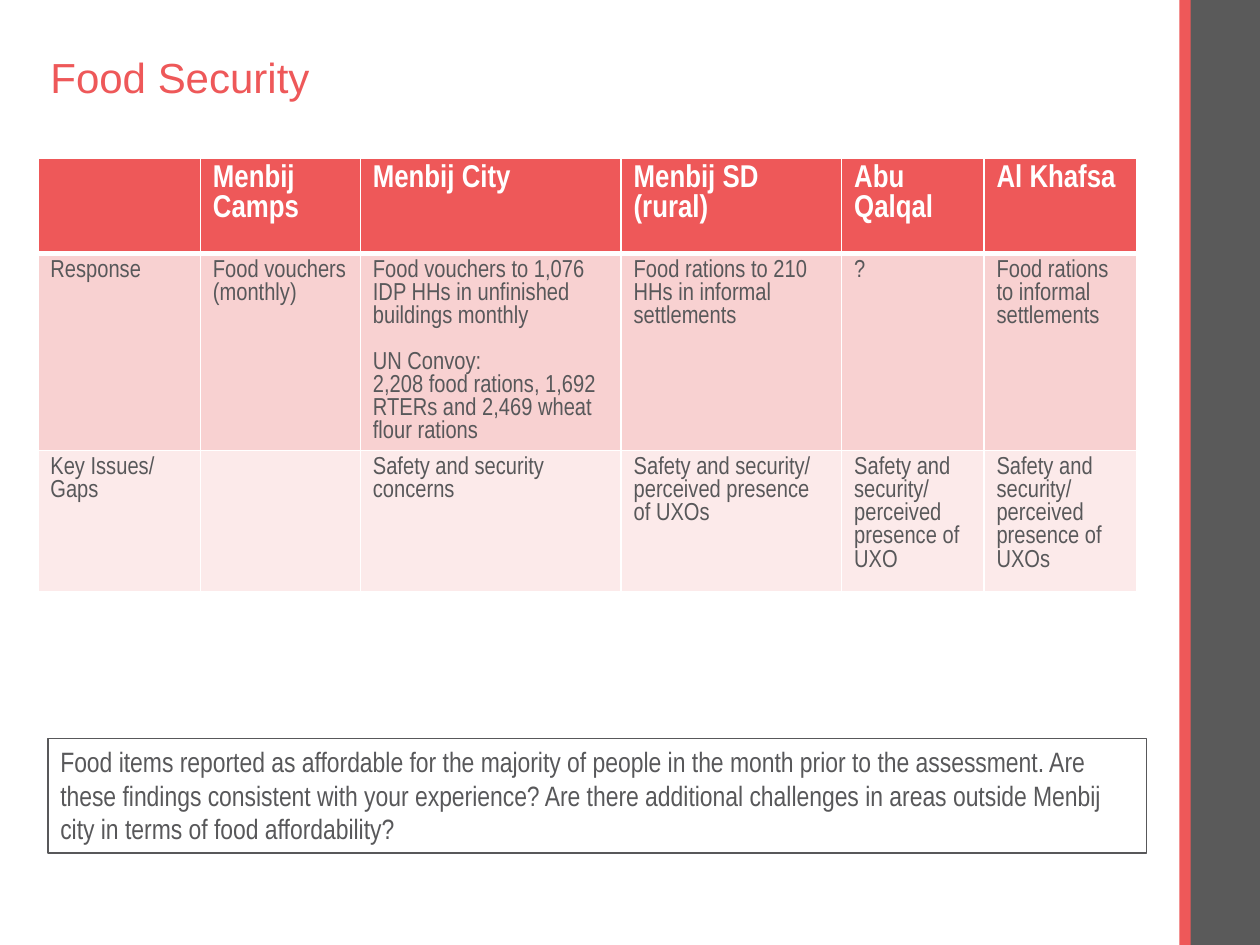
from dataclasses import dataclass

from lxml.etree import SubElement
from pptx import Presentation
from pptx.dml.color import RGBColor
from pptx.enum.shapes import MSO_SHAPE
from pptx.enum.text import MSO_ANCHOR, PP_ALIGN
from pptx.oxml.ns import qn
from pptx.util import Inches, Pt


@dataclass(frozen=True)
class Theme:
    accent: str = "EE5859"
    bar: str = "5A5A5A"
    text: str = "58585A"
    white: str = "FFFFFF"
    bands: tuple = ("F8D1D1", "FCEAEA")
    heading_font: str = "Arial"
    body_font: str = "Arial Narrow"
    title_size: int = 24
    header_size: int = 18
    cell_size: int = 14
    note_size: int = 16


class SlideBuilder:
    def __init__(self, slide, theme):
        self.slide = slide
        self.theme = theme

    def style(self, paragraph, font, size, color, bold=False):
        paragraph.alignment = PP_ALIGN.LEFT
        paragraph.font.name = font
        paragraph.font.size = Pt(size)
        paragraph.font.bold = bold
        paragraph.font.color.rgb = RGBColor.from_string(color)

    def rectangle(self, left, top, width, height, fill=None, line=None):
        box = self.slide.shapes.add_shape(
            MSO_SHAPE.RECTANGLE, Inches(left), Inches(top), Inches(width), Inches(height))
        box.shadow.inherit = False
        if fill:
            box.fill.solid()
            box.fill.fore_color.rgb = RGBColor.from_string(fill)
        else:
            box.fill.background()
        if line:
            box.line.color.rgb = RGBColor.from_string(line)
            box.line.width = Pt(0.75)
        else:
            box.line.fill.background()
        return box

    def title(self, text, left, top, width, height):
        title = self.slide.shapes.title
        title.left, title.top = Inches(left), Inches(top)
        title.width, title.height = Inches(width), Inches(height)
        frame = title.text_frame
        frame.text = text
        frame.vertical_anchor = MSO_ANCHOR.MIDDLE
        paragraph = frame.paragraphs[0]
        paragraph.line_spacing = 0.9
        self.style(paragraph, self.theme.heading_font, self.theme.title_size, self.theme.accent)

    def note(self, text, left, top, width, height):
        box = self.rectangle(left, top, width, height, line=self.theme.text)
        frame = box.text_frame
        frame.word_wrap = True
        frame.vertical_anchor = MSO_ANCHOR.TOP
        frame.text = text
        self.style(frame.paragraphs[0], self.theme.body_font, self.theme.note_size, self.theme.text)

    def borders(self, cell, top, bottom):
        properties = cell._tc.get_or_add_tcPr()
        for side, points in (("L", 1), ("R", 1), ("T", top), ("B", bottom)):
            edge = SubElement(properties, qn(f"a:ln{side}"), w=str(Pt(points)))
            fill = SubElement(edge, qn("a:solidFill"))
            SubElement(fill, qn("a:srgbClr"), val=self.theme.white)

    def cell(self, cell, text, row):
        theme = self.theme
        header = row == 0
        # Borders come before the fill in the cell properties
        self.borders(cell, top=3 if row == 1 else 1, bottom=3 if header else 1)
        cell.fill.solid()
        cell.fill.fore_color.rgb = RGBColor.from_string(
            theme.accent if header else theme.bands[row - 1])
        cell.text = text
        size = theme.header_size if header else theme.cell_size
        color = theme.white if header else theme.text
        for paragraph in cell.text_frame.paragraphs:
            self.style(paragraph, theme.body_font, size, color, bold=header)

    def table(self, rows, left, top, widths, heights):
        table = self.slide.shapes.add_table(
            len(rows), len(widths), Inches(left), Inches(top),
            Inches(sum(widths)), Inches(sum(heights))).table
        table.horz_banding = False
        for column, width in zip(table.columns, widths):
            column.width = Inches(width)
        for table_row, height in zip(table.rows, heights):
            table_row.height = Inches(height)
        for row, texts in enumerate(rows):
            for column, text in enumerate(texts):
                self.cell(table.cell(row, column), text, row)
        return table


RESPONSES = [
    ["", "Menbij Camps", "Menbij City", "Menbij SD (rural)", "Abu Qalqal", "Al Khafsa"],
    ["Response",
     "Food vouchers (monthly)",
     "Food vouchers to 1,076 IDP HHs in unfinished buildings monthly\n"
     "UN Convoy:\n"
     "2,208 food rations, 1,692 RTERs and 2,469 wheat flour rations",
     "Food rations to 210 HHs in informal settlements",
     "?",
     "Food rations to informal settlements"],
    ["Key Issues/ Gaps",
     "",
     "Safety and security concerns",
     "Safety and security/ perceived presence of UXOs",
     "Safety and security/ perceived presence of UXO",
     "Safety and security/ perceived presence of UXOs"],
]
QUESTION = (
    "Food items reported as affordable for the majority of people in the month prior to the "
    "assessment. Are these findings consistent with your experience? Are there additional "
    "challenges in areas outside Menbij city in terms of food affordability?")


def main():
    presentation = Presentation()
    presentation.slide_width, presentation.slide_height = Inches(10), Inches(7.5)
    theme = Theme()
    slide = presentation.slides.add_slide(presentation.slide_layouts[5])
    builder = SlideBuilder(slide, theme)

    # Side bars
    builder.rectangle(9.44, 0, 0.56, 7.5, fill=theme.bar)
    builder.rectangle(9.36, 0, 0.09, 7.5, fill=theme.accent)

    # Title
    builder.title("Food Security", 0.3, 0.36, 8.62, 0.55)

    # Responses and gaps by area
    responses = builder.table(
        RESPONSES, 0.3, 1.26,
        widths=[1.29, 1.27, 2.07, 1.75, 1.13, 1.21], heights=[0.75, 1.56, 1.12])
    convoy = responses.cell(1, 2).text_frame.paragraphs[1]
    convoy.space_before = Pt(13)

    # Discussion question
    builder.note(QUESTION, 0.38, 5.86, 8.72, 0.91)

    presentation.save("out.pptx")


if __name__ == "__main__":
    main()
